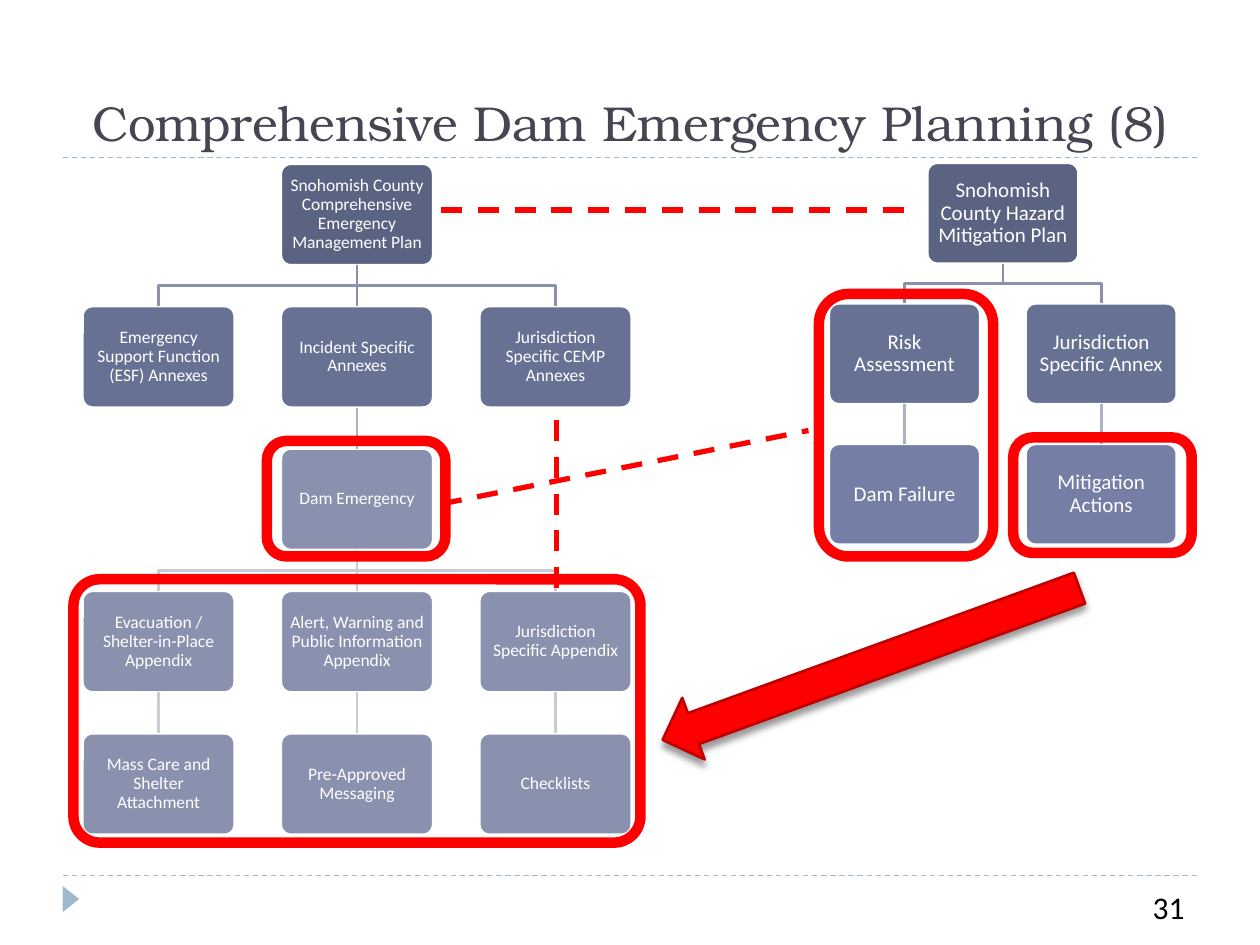
from dataclasses import dataclass

from lxml.etree import SubElement
from pptx import Presentation
from pptx.dml.color import RGBColor
from pptx.enum.dml import MSO_LINE as Dash
from pptx.enum.shapes import MSO_CONNECTOR as Connector, MSO_SHAPE as Shape
from pptx.enum.text import MSO_ANCHOR as Anchor, PP_ALIGN as Align
from pptx.oxml.ns import qn
from pptx.util import Pt


@dataclass(frozen=True)
class Theme:
    heading_font: str = "TeX Gyre Bonum"
    body_font: str = "Calibri"
    title_size: float = 28
    number_size: float = 18
    title: str = "464653"
    rule: str = "9FB8CD"
    white: str = "FFFFFF"
    black: str = "000000"
    red: str = "FF0000"
    dark_red: str = "C00000"
    plan: str = "5B6383"
    annex: str = "677194"
    hazard: str = "757EA4"
    appendix: str = "8991AF"
    link_strong: str = "8991AF"
    link_medium: str = "ADB1C5"
    link_light: str = "C9CCD7"


@dataclass(frozen=True)
class Grid:
    """Evenly spaced boxes: centre of column 0, top of row 0."""
    center: float
    top: float
    column_step: float
    row_step: float
    width: float
    height: float
    size: float
    inset: float

    def frame(self, column, row):
        left = self.center + column * self.column_step - self.width / 2
        return left, self.top + row * self.row_step, self.width, self.height


class SlideBuilder:
    def __init__(self, slide, theme):
        self.slide, self.shapes, self.theme = slide, slide.shapes, theme

    def color(self, value):
        return RGBColor.from_string(value)

    def format_text(self, paragraph, size, color, align, font=None):
        paragraph.alignment = align
        paragraph.font.name = font or self.theme.body_font
        paragraph.font.size = Pt(size)
        paragraph.font.color.rgb = self.color(color)

    def format_line(self, line, color, width, dashed=False):
        line.color.rgb = self.color(color)
        line.width = Pt(width)
        if dashed:
            line.dash_style = Dash.DASH

    def title(self, text, frame):
        shape = self.shapes.title
        shape.left, shape.top, shape.width, shape.height = map(Pt, frame)
        shape.text_frame.text = text
        shape.text_frame.vertical_anchor = Anchor.BOTTOM
        self.format_text(shape.text_frame.paragraphs[0], self.theme.title_size,
                         self.theme.title, Align.CENTER, self.theme.heading_font)

    def text(self, text, frame, size, color, align):
        shape = self.shapes.add_textbox(*map(Pt, frame))
        shape.text_frame.word_wrap = True
        shape.text_frame.text = text
        self.format_text(shape.text_frame.paragraphs[0], size, color, align)

    def shape(self, kind, frame, fill=None, line=None, width=1.5, rotation=0):
        shape = self.shapes.add_shape(kind, *map(Pt, frame))
        shape.shadow.inherit = False
        shape.rotation = rotation
        if fill:
            shape.fill.solid()
            shape.fill.fore_color.rgb = self.color(fill)
        else:
            shape.fill.background()
        if line:
            self.format_line(shape.line, line, width)
        else:
            shape.line.fill.background()
        return shape

    def box(self, grid, column, row, text, fill):
        shape = self.shape(Shape.ROUNDED_RECTANGLE, grid.frame(column, row),
                           fill, self.theme.white)
        shape.adjustments[0] = 0.1
        frame = shape.text_frame
        frame.word_wrap = True
        frame.vertical_anchor = Anchor.MIDDLE
        frame.margin_left = frame.margin_right = Pt(grid.inset)
        frame.margin_top = frame.margin_bottom = Pt(grid.inset)
        frame.text = text
        frame.paragraphs[0].line_spacing = 0.9
        self.format_text(frame.paragraphs[0], grid.size, self.theme.white, Align.CENTER)
        return shape

    def highlight(self, frame, corner=0.17):
        shape = self.shape(Shape.ROUNDED_RECTANGLE, frame, line=self.theme.red, width=6)
        shape.adjustments[0] = corner

    def line(self, start, end, color, width, dashed=False):
        line = self.shapes.add_connector(Connector.STRAIGHT, *map(Pt, start + end))
        SubElement(line._element.spPr, qn("a:effectLst"))
        self.format_line(line.line, color, width, dashed)
        return line

    def link(self, parent, child, color):
        """Join the bottom of one box to the top of another."""
        x, y = parent.left + parent.width // 2, parent.top + parent.height
        end_x, end_y = child.left + child.width // 2, child.top
        if abs(end_x - x) < Pt(1):
            line = self.line((0, 0), (1, 1), color, 1.5)
            line.begin_connect(parent, 2)
            line.end_connect(child, 0)
            return
        middle = (y + end_y) // 2
        outline = self.shapes.build_freeform(x, y)
        outline.add_line_segments([(x, middle), (end_x, middle), (end_x, end_y)], close=False)
        elbow = outline.convert_to_shape()
        elbow.shadow.inherit = False
        elbow.fill.background()
        self.format_line(elbow.line, color, 1.5)

    def tree(self, grid, nodes, links):
        boxes = {(column, row): self.box(grid, column, row, text, fill)
                 for column, row, text, fill in nodes}
        for parent, child, color in links:
            self.link(boxes[parent], boxes[child], color)

    def arrow(self, frame, rotation):
        shape = self.shape(Shape.DOWN_ARROW, frame, self.theme.red,
                           self.theme.dark_red, rotation=rotation)
        effects = shape._element.spPr.find(qn("a:effectLst"))
        shadow = SubElement(effects, qn("a:outerShdw"), blurRad=str(Pt(4)),
                            dist=str(Pt(3)), dir="5400000", rotWithShape="0")
        color = SubElement(shadow, qn("a:srgbClr"), val=self.theme.black)
        SubElement(color, qn("a:alpha"), val="40000")


def main():
    theme = Theme()
    presentation = Presentation()
    presentation.slide_width, presentation.slide_height = Pt(720), Pt(540)
    slide = presentation.slides.add_slide(presentation.slide_layouts[5])
    builder = SlideBuilder(slide, theme)

    # Page frame and title
    for y in (500.4, 90):
        builder.line((36, y), (684, y), theme.rule, 0.75, dashed=True)
    builder.shape(Shape.ISOSCELES_TRIANGLE, (33, 509, 15, 9.5), theme.rule, rotation=90)
    builder.title("Comprehensive Dam Emergency Planning (8)", (36, 12, 648, 78))

    # Emergency management plan tree
    strong, medium, light = theme.link_strong, theme.link_medium, theme.link_light
    builder.tree(
        Grid(204, 93.6, 113.4, 81.36, 87, 58, 10, 2.8),
        [(0, 0, "Snohomish County Comprehensive Emergency Management Plan", theme.plan),
         (-1, 1, "Emergency Support Function (ESF) Annexes", theme.annex),
         (0, 1, "Incident Specific Annexes", theme.annex),
         (1, 1, "Jurisdiction Specific CEMP Annexes", theme.annex),
         (0, 2, "Dam Emergency", theme.appendix),
         (-1, 3, "Evacuation / Shelter-in-Place Appendix", theme.appendix),
         (0, 3, "Alert, Warning and Public Information Appendix", theme.appendix),
         (1, 3, "Jurisdiction Specific Appendix", theme.appendix),
         (-1, 4, "Mass Care and Shelter Attachment", theme.appendix),
         (0, 4, "Pre-Approved Messaging", theme.appendix),
         (1, 4, "Checklists", theme.appendix)],
        [((0, 0), (column, 1), strong) for column in (-1, 0, 1)]
        + [((0, 1), (0, 2), medium)]
        + [((0, 2), (column, 3), light) for column in (-1, 0, 1)]
        + [((column, 3), (column, 4), light) for column in (-1, 0, 1)])

    # Hazard mitigation plan tree
    builder.tree(
        Grid(573.1, 93.1, 56.2, 80.3, 86.4, 57.6, 12, 3.7),
        [(0, 0, "Snohomish County Hazard Mitigation Plan", theme.plan),
         (-1, 1, "Risk Assessment", theme.annex),
         (1, 1, "Jurisdiction Specific Annex", theme.annex),
         (-1, 2, "Dam Failure", theme.hazard),
         (1, 2, "Mitigation Actions", theme.hazard)],
        [((0, 0), (column, 1), strong) for column in (-1, 1)]
        + [((column, 1), (column, 2), medium) for column in (-1, 1)])

    # Relations between the two plans
    for start, end in [((318, 240), (318, 336)), ((252, 120), (522, 120)),
                       ((252, 288), (462, 246))]:
        builder.line(start, end, theme.red, 3, dashed=True)

    # Highlights and arrow
    for frame in [(468, 168, 99.5, 150), (152.5, 252, 102, 66), (579, 250, 102, 66)]:
        builder.highlight(frame)
    builder.highlight((42, 331, 324, 150.5), corner=0.1)
    builder.arrow((479, 252.7, 37.5, 253.5), rotation=70)

    # Page number
    builder.text("31", (624, 504, 60, 29), theme.number_size, theme.black, Align.RIGHT)

    presentation.save("out.pptx")


if __name__ == "__main__":
    main()
